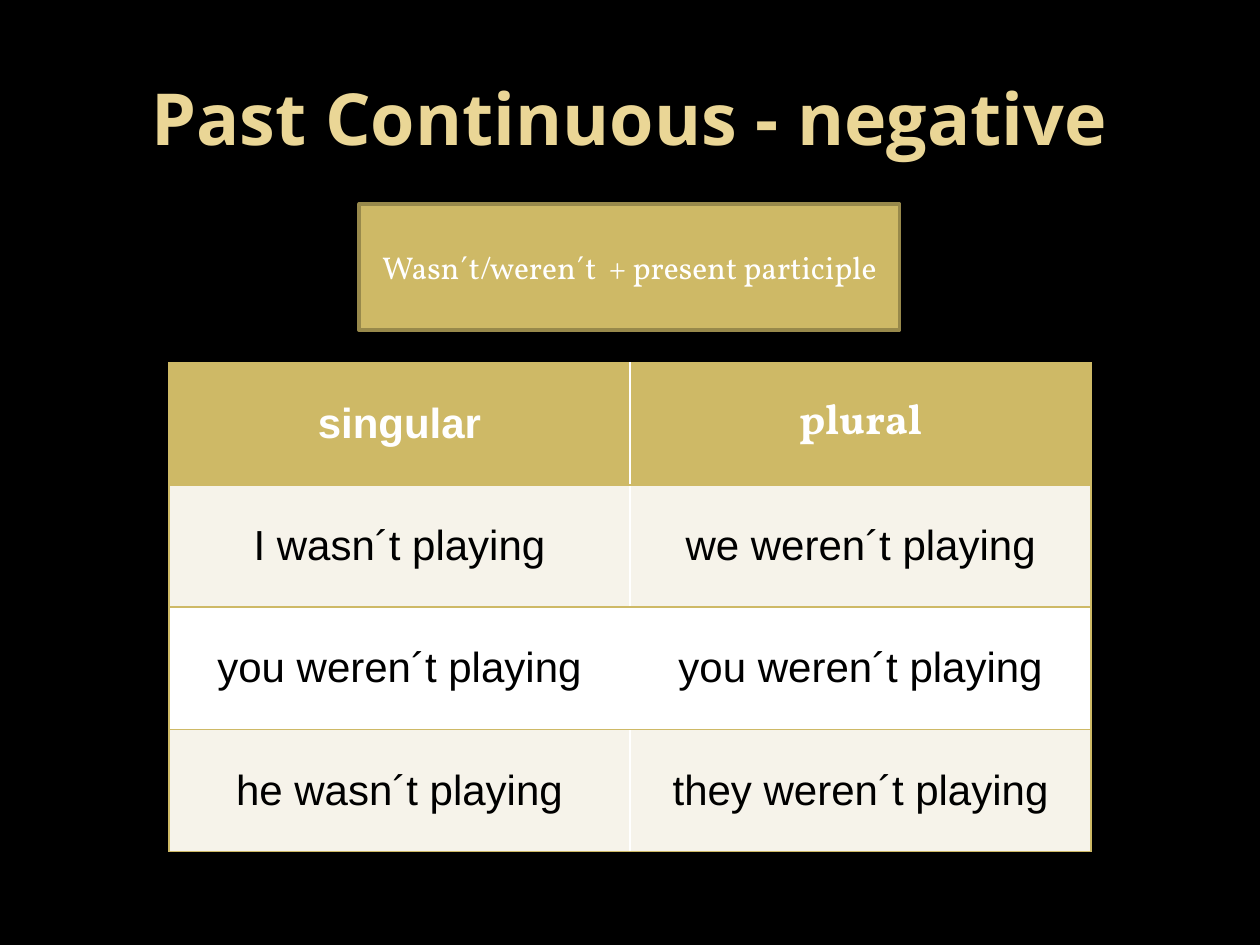
from dataclasses import dataclass

from lxml.etree import SubElement
from pptx import Presentation
from pptx.dml.color import RGBColor
from pptx.enum.shapes import MSO_SHAPE
from pptx.enum.text import MSO_ANCHOR, PP_ALIGN
from pptx.oxml.ns import qn
from pptx.util import Inches, Pt


@dataclass(frozen=True)
class Theme:
    background: str = "000000"
    title: str = "EAD696"
    gold: str = "CEB966"
    outline: str = "98894B"
    white: str = "FFFFFF"
    black: str = "000000"
    band: str = "F6F3EA"
    title_font: str = "Open Sans"
    accent_font: str = "Vollkorn"
    body_font: str = "Arial"
    title_size: int = 41
    table_size: int = 24
    rule_size: int = 18


THEME = Theme()
ROWS = [
    ("singular", "plural"),
    ("I wasn´t playing", "we weren´t playing"),
    ("you weren´t playing", "you weren´t playing"),
    ("he wasn´t playing", "they weren´t playing"),
]


def box(*lengths):
    return [Inches(length) for length in lengths]


def set_fill(fill, color):
    fill.solid()
    fill.fore_color.rgb = RGBColor.from_string(color)


def write_text(tf, text, color, **formats):
    tf.word_wrap = True
    p = tf.paragraphs[0]
    p.alignment = PP_ALIGN.CENTER
    r = p.add_run()
    r.text = text
    r.font.color.rgb = RGBColor.from_string(color)
    for name, value in formats.items():
        setattr(r.font, name, value)


def add_title(slide, text):
    tf = slide.shapes.add_textbox(*box(0.5, 0.3, 9, 1.25)).text_frame
    tf.vertical_anchor = MSO_ANCHOR.MIDDLE
    write_text(tf, text, THEME.title, name=THEME.title_font,
               size=Pt(THEME.title_size), bold=True)


def add_rule_box(slide, text):
    sp = slide.shapes.add_shape(MSO_SHAPE.RECTANGLE, *box(2.85, 1.62, 4.29, 1))
    sp.shadow.inherit = False
    set_fill(sp.fill, THEME.gold)
    set_fill(sp.line.fill, THEME.outline)
    sp.line.width = Pt(2)
    tf = sp.text_frame
    tf.vertical_anchor = MSO_ANCHOR.MIDDLE
    write_text(tf, text, THEME.white, name=THEME.accent_font,
               size=Pt(THEME.rule_size))


def add_borders(cell, sides):
    tc_pr = cell._tc.get_or_add_tcPr()
    for side in sides:
        ln = SubElement(tc_pr, qn(f"a:ln{side}"), w=str(Pt(1)))
        fill = SubElement(ln, qn("a:solidFill"))
        SubElement(fill, qn("a:srgbClr"), val=THEME.gold)


def fill_cell(cell, text, row, col):
    header = row == 0
    add_borders(cell, "RTB" if col else "LTB")
    band = THEME.band if row % 2 else THEME.white
    set_fill(cell.fill, THEME.gold if header else band)
    cell.vertical_anchor = MSO_ANCHOR.MIDDLE
    font = THEME.accent_font if header and col else THEME.body_font
    write_text(cell.text_frame, text, THEME.white if header else THEME.black,
               name=font, size=Pt(THEME.table_size), bold=header)


def add_forms_table(slide, rows):
    table = slide.shapes.add_table(
        len(rows), len(rows[0]), *box(1.34, 2.88, 7.32, 3.88)).table
    table.first_row = table.horz_banding = False
    for row, texts in enumerate(rows):
        for col, text in enumerate(texts):
            fill_cell(table.cell(row, col), text, row, col)


def main():
    prs = Presentation()
    prs.slide_width, prs.slide_height = box(10, 7.5)
    slide = prs.slides.add_slide(prs.slide_layouts[6])
    set_fill(slide.background.fill, THEME.background)
    add_title(slide, "Past Continuous - negative")
    add_forms_table(slide, ROWS)
    add_rule_box(slide, "Wasn´t/weren´t  + present participle")
    prs.save("out.pptx")


if __name__ == "__main__":
    main()
